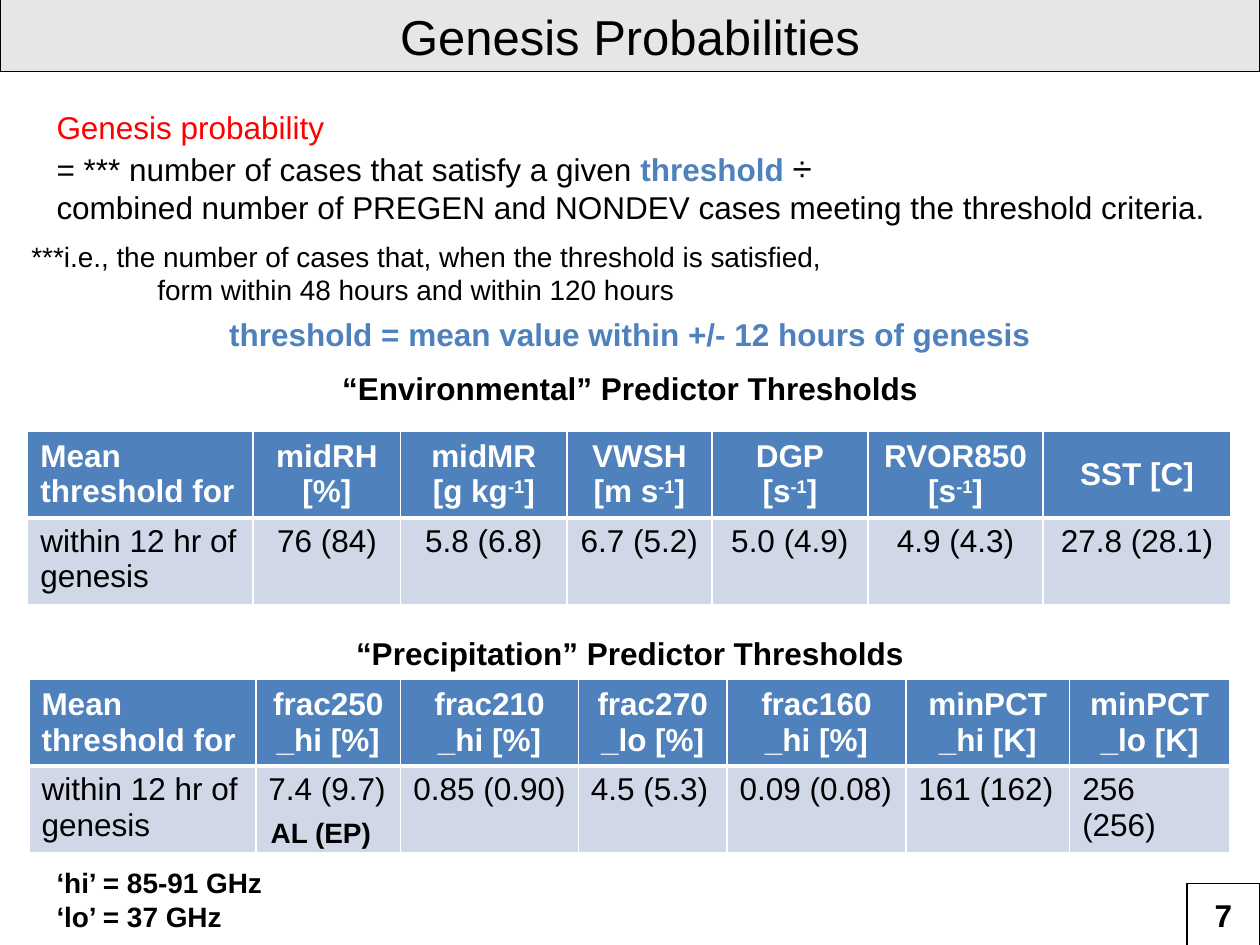
from typing import NamedTuple, Optional, Union

from lxml import etree
from pptx import Presentation
from pptx import util as u
from pptx.dml.color import RGBColor
from pptx.enum import shapes, text
from pptx.oxml import ns

BLACK = RGBColor(0x00, 0x00, 0x00)
WHITE = RGBColor(0xFF, 0xFF, 0xFF)
RED = RGBColor(0xFF, 0x00, 0x00)
GRAY = RGBColor(0xBF, 0xBF, 0xBF)
BLUE = RGBColor(0x4F, 0x81, 0xBD)
PALE_BLUE = RGBColor(0xD0, 0xD8, 0xE8)
LEFT, CENTER, JUSTIFY = text.PP_ALIGN.LEFT, text.PP_ALIGN.CENTER, text.PP_ALIGN.JUSTIFY
ROW_HEIGHT = 0.69


class Run(NamedTuple):
    text: str
    color: Optional[RGBColor] = None
    size: Optional[float] = None
    bold: Optional[bool] = None
    raised: bool = False


Line = list[Union[str, Run]]


class Box(NamedTuple):
    left: float
    top: float
    width: float
    height: float


class Label(NamedTuple):
    box: Box
    lines: list[Line]
    size: float = 18
    color: RGBColor = BLACK
    bold: bool = True
    align: text.PP_ALIGN = LEFT
    indents: tuple[float, ...] = ()


class Grid(NamedTuple):
    left: float
    top: float
    widths: list[float]
    headers: list[list[Line]]
    values: list[str]
    value_align: text.PP_ALIGN


def unit(name: str) -> Line:
    return [f"{name}", Run("-1", raised=True), "]"]


LABELS = [
    Label(Box(0, 0, 10, 0.57), [["Genesis Probabilities"]], size=28, bold=False, align=CENTER),
    Label(Box(0.35, 0.81, 9.32, 1.04), [
        [Run("Genesis probability", color=RED)],
        ["= *** number of cases that satisfy a given ",
         Run("threshold ", color=BLUE, bold=True), Run("÷", size=20)],
        ["combined number of PREGEN and NONDEV cases meeting the threshold criteria."],
    ], bold=False, align=JUSTIFY),
    Label(Box(0, 2.45, 10, 0.4), [["threshold = mean value within +/- 12 hours of genesis"]],
          color=BLUE, align=CENTER),
    Label(Box(0.15, 1.85, 9.85, 0.64), [
        ["***i.e., the number of cases that, when the threshold is satisfied,"],
        ["form within 48 hours and within 120 hours"],
    ], size=16, bold=False, indents=(0, 1)),
    Label(Box(0, 2.88, 10, 0.41), [["“Environmental” Predictor Thresholds"]], align=CENTER),
    Label(Box(0, 4.98, 10, 0.41), [["“Precipitation” Predictor Thresholds"]], align=CENTER),
    Label(Box(9.42, 7.06, 0.58, 0.4), [["7"]], align=CENTER),
    Label(Box(0.35, 6.82, 4.21, 0.64), [["‘hi’ = 85-91 GHz"], ["‘lo’ = 37 GHz"]], size=16),
]
UNITS_LABEL = Label(Box(2.05, 6.42, 1.14, 0.37), [["AL (EP)"]], size=16)

GRIDS = [
    Grid(0.23, 5.39, [1.8, 1.15, 1.41, 1.18, 1.42, 1.3, 1.27],
         [[["frac250_hi [%]"]], [["frac210"], ["_hi [%]"]], [["frac270"], ["_lo [%]"]],
          [["frac160"], ["_hi [%]"]], [["minPCT"], ["_hi [K]"]], [["minPCT"], ["_lo [K]"]]],
         ["7.4 (9.7)", "0.85 (0.90)", "4.5 (5.3)", "0.09 (0.08)", "161 (162)", "256 (256)"], LEFT),
    Grid(0.22, 3.42, [1.79, 1.17, 1.32, 1.15, 1.24, 1.39, 1.49],
         [[["midRH [%]"]], [unit("midMR [g kg")], [unit("VWSH [m s")],
          [["DGP"], unit("[s")], [unit("RVOR850 [s")], [["SST [C]"]]],
         ["76 (84)", "5.8 (6.8)", "6.7 (5.2)", "5.0 (4.9)", "4.9 (4.3)", "27.8 (28.1)"], CENTER),
]


def write(frame, lines: list[Line], *, size: float = 18, color: RGBColor = BLACK,
          bold: bool = False, align: text.PP_ALIGN = LEFT, indents: tuple[float, ...] = ()) -> None:
    """Fill a text frame with formatted paragraphs."""
    for index, line in enumerate(lines):
        paragraph = frame.add_paragraph() if index else frame.paragraphs[0]
        paragraph.alignment = align
        if indents:
            paragraph._p.get_or_add_pPr().set("marL", str(u.Inches(indents[index])))
        for item in line:
            part = Run(item) if isinstance(item, str) else item
            run = paragraph.add_run()
            run.text = part.text
            run.font.name = "Arial"
            run.font.size = u.Pt(part.size or size)
            run.font.bold = bold if part.bold is None else part.bold
            run.font.color.rgb = part.color or color
            if part.raised:
                run._r.get_or_add_rPr().set("baseline", "30000")


def place(box: Box) -> list[u.Inches]:
    """Convert a box to lengths."""
    return [u.Inches(value) for value in box]


def add_label(slide, label: Label) -> None:
    """Add a text box that grows with its text."""
    frame = slide.shapes.add_textbox(*place(label.box)).text_frame
    frame.word_wrap = True
    frame.auto_size = text.MSO_AUTO_SIZE.SHAPE_TO_FIT_TEXT
    write(frame, label.lines, size=label.size, color=label.color, bold=label.bold,
          align=label.align, indents=label.indents)


def add_frame(slide, box: Box, fill: Optional[RGBColor] = None, opacity: int = 100) -> None:
    """Add an outlined rectangle with an optional translucent fill."""
    shape = slide.shapes.add_shape(shapes.MSO_SHAPE.RECTANGLE, *place(box))
    shape.shadow.inherit = False
    shape.line.color.rgb = BLACK
    shape.line.width = u.Pt(0.75)
    if fill is None:
        shape.fill.background()
        return
    shape.fill.solid()
    shape.fill.fore_color.rgb = fill
    color = shape._element.spPr.find(ns.qn("a:solidFill"))[0]
    etree.SubElement(color, ns.qn("a:alpha"), val=str(opacity * 1000))


def style_cell(cell, fill: RGBColor, top: float, bottom: float) -> None:
    """Give a cell white borders and a solid fill."""
    properties = cell._tc.get_or_add_tcPr()
    for side, width in {"L": 1, "R": 1, "T": top, "B": bottom}.items():
        border = etree.SubElement(properties, ns.qn(f"a:ln{side}"), w=str(u.Pt(width)))
        solid = etree.SubElement(border, ns.qn("a:solidFill"))
        etree.SubElement(solid, ns.qn("a:srgbClr"), val=str(WHITE))
    cell.fill.solid()
    cell.fill.fore_color.rgb = fill


def add_grid(slide, grid: Grid) -> None:
    """Add a threshold table with a header row and a value row."""
    box = Box(grid.left, grid.top, sum(grid.widths), 2 * ROW_HEIGHT)
    table = slide.shapes.add_table(2, len(grid.widths), *place(box)).table
    for column, width in zip(table.columns, grid.widths):
        column.width = u.Inches(width)
    headers = [[["Mean threshold for"]], *grid.headers]
    values = ["within 12 hr of genesis", *grid.values]
    for index, (header, value) in enumerate(zip(headers, values)):
        head, body = table.cell(0, index), table.cell(1, index)
        head.vertical_anchor = text.MSO_ANCHOR.MIDDLE
        style_cell(head, BLUE, top=1, bottom=3)
        style_cell(body, PALE_BLUE, top=3, bottom=1)
        write(head.text_frame, header, color=WHITE, bold=True, align=CENTER if index else LEFT)
        write(body.text_frame, [[value]], align=grid.value_align if index else LEFT)


def main() -> None:
    """Build the genesis probabilities slide."""
    presentation = Presentation()
    presentation.slide_width, presentation.slide_height = u.Inches(10), u.Inches(7.5)
    slide = presentation.slides.add_slide(presentation.slide_layouts[6])
    add_frame(slide, Box(0, -0.02, 10, 0.59), fill=GRAY, opacity=39)
    add_frame(slide, Box(9.42, 7.01, 0.58, 0.5))
    for grid in GRIDS:
        add_grid(slide, grid)
    for label in [*LABELS, UNITS_LABEL]:
        add_label(slide, label)
    presentation.save("out.pptx")


if __name__ == "__main__":
    main()
